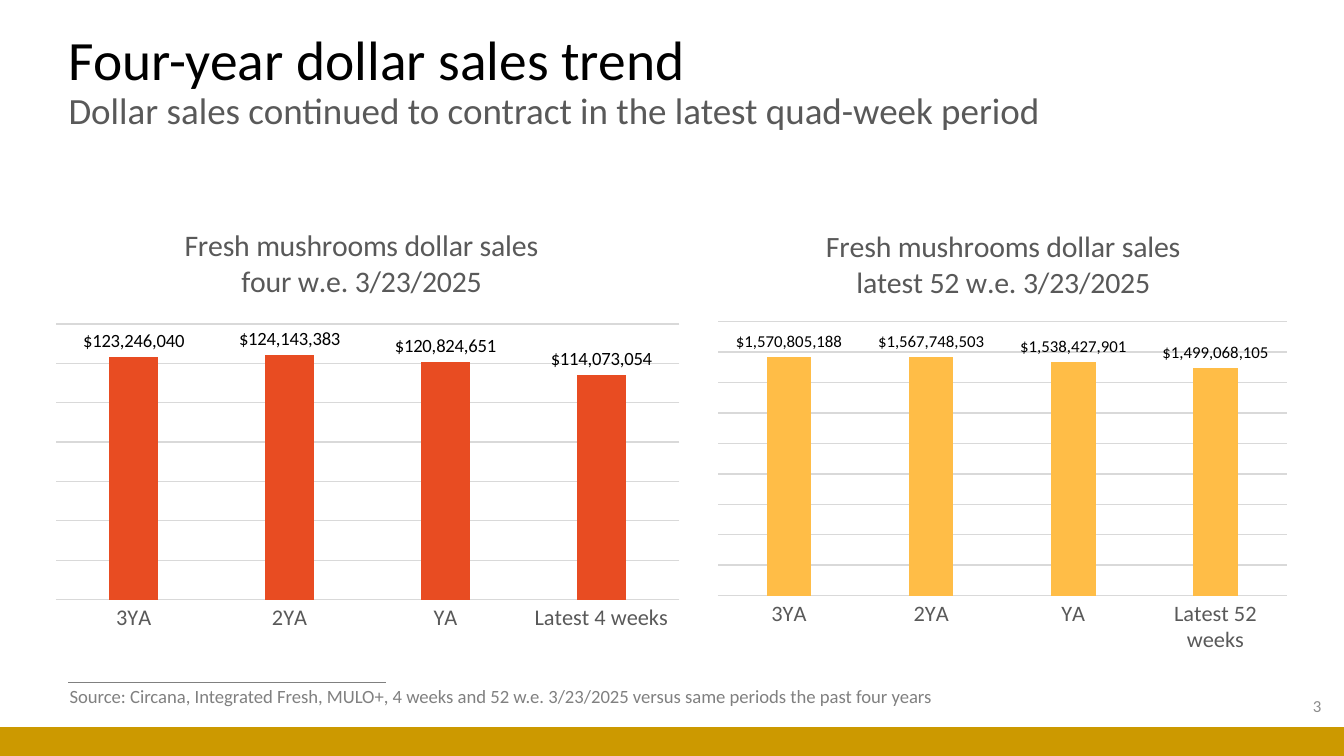
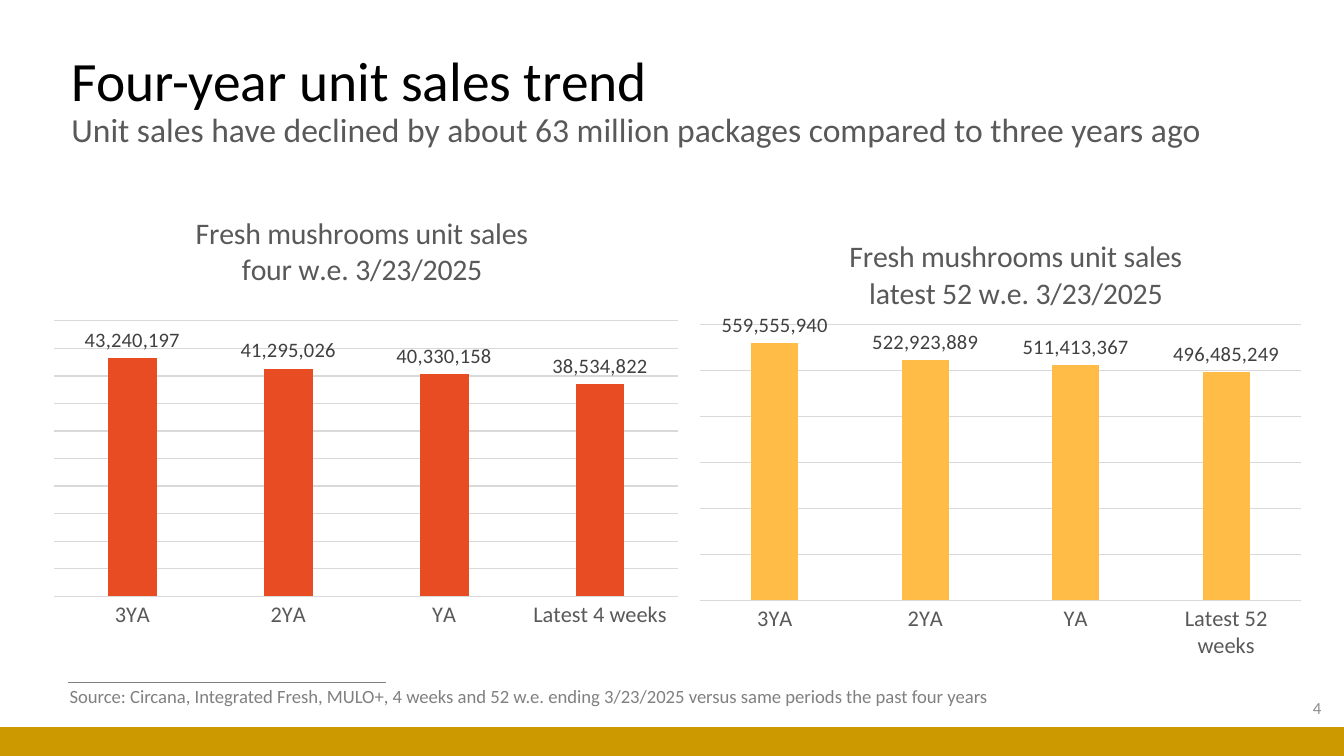
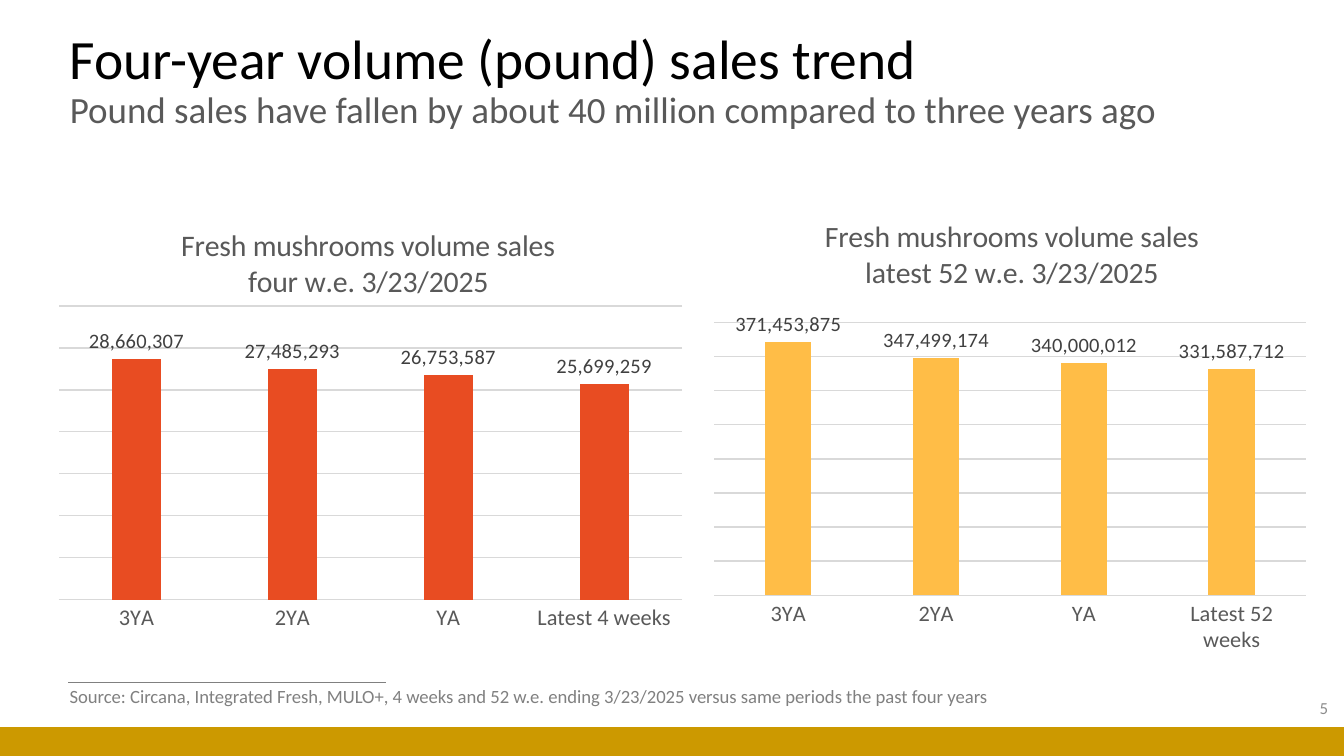
from dataclasses import dataclass
from typing import Any

from lxml import etree
from pptx import Presentation
from pptx.chart.data import CategoryChartData
from pptx.dml.color import RGBColor
from pptx.enum.chart import XL_CHART_TYPE, XL_LABEL_POSITION, XL_TICK_LABEL_POSITION, XL_TICK_MARK
from pptx.enum.shapes import MSO_CONNECTOR, MSO_SHAPE
from pptx.enum.text import MSO_ANCHOR, MSO_AUTO_SIZE, PP_ALIGN
from pptx.oxml.ns import qn
from pptx.util import Pt

COLUMNS = XL_CHART_TYPE.COLUMN_CLUSTERED
OUTSIDE_END = XL_LABEL_POSITION.OUTSIDE_END
NO_TICK = XL_TICK_MARK.NONE
NEXT_TO_AXIS = XL_TICK_LABEL_POSITION.NEXT_TO_AXIS
STRAIGHT = MSO_CONNECTOR.STRAIGHT
RECTANGLE = MSO_SHAPE.RECTANGLE
MIDDLE, TOP = MSO_ANCHOR.MIDDLE, MSO_ANCHOR.TOP
NO_FIT = MSO_AUTO_SIZE.NONE
LEFT, RIGHT = PP_ALIGN.LEFT, PP_ALIGN.RIGHT

BLACK = RGBColor(0x00, 0x00, 0x00)
DARK_GREY = RGBColor(0x40, 0x40, 0x40)
TEXT_GREY = RGBColor(0x59, 0x59, 0x59)
SOURCE_GREY = RGBColor(0x80, 0x80, 0x80)
NUMBER_GREY = RGBColor(0x8C, 0x8C, 0x8C)
GRID_GREY = RGBColor(0xD9, 0xD9, 0xD9)
GOLD = RGBColor(0xCC, 0x99, 0x00)
ORANGE = RGBColor(0xE8, 0x4C, 0x22)
YELLOW = RGBColor(0xFF, 0xBD, 0x47)

FONT = "Calibri"
DOLLARS = "\\$#,##0"
COUNT = "#,##0"
MILLION = 1_000_000
TITLE_ONLY = 5

Box = tuple[float, float, float, float]


@dataclass(frozen=True)
class SalesChart:
    box: Box
    plot: Box
    values: tuple[int, ...]
    axis_top: int
    axis_step: int
    label_size: float
    title_spot: tuple[float, float]


@dataclass(frozen=True)
class TrendPage:
    number: int
    measure: str
    heading: str
    message: str
    message_size: float
    title_box: Box
    number_spot: tuple[float, float]
    source_period: str
    number_format: str
    label_color: RGBColor
    four_weeks: SalesChart
    year: SalesChart


PAGES = (
    TrendPage(
        3, "dollar", "Four-year dollar sales trend",
        "Dollar sales continued to contract in the latest quad-week period",
        19.8, (29.5, 15.8, 619.2, 56.9), (553, 367.2), "w.e.", DOLLARS, BLACK,
        SalesChart((29.5, 111.6, 334.8, 238.3), (0, 0.26, 1, 0.62),
                   (123246040, 124143383, 120824651, 114073054),
                   140, 20, 10, (0.2, 0.03)),
        SalesChart((371.5, 117.4, 327.6, 232.6), (0.04, 0.24, 0.93, 0.64),
                   (1570805188, 1567748503, 1538427901, 1499068105),
                   1800, 200, 9, (0.21, 0.01)),
    ),
    TrendPage(
        4, "unit", "Four-year unit sales trend",
        "Unit sales have declined by about 63 million packages compared to three years ago",
        18, (31, 25.9, 652.3, 56.9), (553, 368.6), "w.e. ending", COUNT, DARK_GREY,
        SalesChart((28.8, 105.1, 334.8, 238.3), (0, 0.28, 1, 0.62),
                   (43240197, 41295026, 40330158, 38534822),
                   50, 5, 11, (0.22, 0.03)),
        SalesChart((374.4, 117.4, 339.8, 246.2), (0, 0.23, 0.95, 0.6),
                   (559555940, 522923889, 511413367, 496485249),
                   600, 100, 11, (0.23, 0.03)),
    ),
    TrendPage(
        5, "volume", "Four-year volume (pound) sales trend",
        "Pound sales have fallen by about 40 million compared to three years ago",
        19.8, (30.2, 15.1, 619.2, 56.9), (556.6, 368.6), "w.e. ending", COUNT, DARK_GREY,
        SalesChart((31, 111.6, 334.8, 238.3), (0, 0.22, 1, 0.66),
                   (28660307, 27485293, 26753587, 25699259),
                   35, 5, 11, (0.19, 0.03)),
        SalesChart((382.3, 111.6, 317.5, 238.3), (0, 0.26, 1, 0.62),
                   (371453875, 347499174, 340000012, 331587712),
                   400, 50, 11, (0.18, 0.01)),
    ),
)


def points(values: tuple[float, ...]) -> list[Pt]:
    return [Pt(value) for value in values]


def apply(target: Any, values: dict[str, Any]) -> None:
    for name, value in values.items():
        setattr(target, name, value)


def style_font(font: Any, size: float, color: RGBColor) -> None:
    apply(font, {"name": FONT, "size": Pt(size), "bold": False})
    font.color.rgb = color


def add_span(para: Any, text: str, size: float, color: RGBColor) -> None:
    span = para.add_run()
    span.text = text
    style_font(span.font, size, color)


def add_text(page: Any, box: Box, text: str, size: float, color: RGBColor,
             frame_format: dict[str, Any], align: Any) -> None:
    frame = page.shapes.add_textbox(*points(box)).text_frame
    apply(frame, frame_format)
    para = frame.paragraphs[0]
    para.alignment = align
    add_span(para, text, size, color)


def add_title(page: Any, trend: TrendPage) -> None:
    title = page.shapes.title
    apply(title, dict(zip(("left", "top", "width", "height"), points(trend.title_box))))
    apply(title.text_frame, {"vertical_anchor": MIDDLE, "word_wrap": True, "auto_size": NO_FIT})
    para = title.text_frame.paragraphs[0]
    apply(para, {"alignment": LEFT, "line_spacing": 0.9})
    add_span(para, trend.heading, 29.7, BLACK)
    para.add_line_break()
    add_span(para, trend.message, trend.message_size, TEXT_GREY)


def add_footer(page: Any, trend: TrendPage) -> None:
    rule = page.shapes.add_connector(STRAIGHT, *points((36.7, 365.8, 206.6, 365.8)))
    rule.line.color.rgb = SOURCE_GREY
    rule.line.width = Pt(0.5)
    etree.SubElement(rule.element.spPr, qn("a:effectLst"))
    band = page.shapes.add_shape(RECTANGLE, *points((0, 389.5, 720, 15.5)))
    band.shadow.inherit = False
    band.fill.solid()
    band.fill.fore_color.rgb = GOLD
    band.line.fill.background()
    add_text(page, (*trend.number_spot, 162, 21.6), str(trend.number), 9, NUMBER_GREY,
             {"vertical_anchor": MIDDLE, "word_wrap": True}, RIGHT)
    source = (f"Source: Circana, Integrated Fresh, MULO+, 4 weeks and 52 {trend.source_period} "
              "3/23/2025 versus same periods the past four years")
    add_text(page, (30.2, 363.6, 521.3, 19.4), source, 10, SOURCE_GREY,
             {"vertical_anchor": TOP, "word_wrap": False}, LEFT)


def place(parent: Any, index: int, settings: dict[str, Any]) -> None:
    for old in parent.findall(qn("c:layout")):
        parent.remove(old)
    layout = etree.Element(qn("c:layout"))
    manual = etree.SubElement(layout, qn("c:manualLayout"))
    for name, value in settings.items():
        etree.SubElement(manual, qn(f"c:{name}")).set("val", str(value))
    parent.insert(index, layout)


def add_chart_title(chart: Any, lines: tuple[str, str], spot: tuple[float, float]) -> None:
    chart.has_title = True
    frame = chart.chart_title.text_frame
    frame.text = "\n".join(lines)
    for para in frame.paragraphs:
        style_font(para.font, 16, TEXT_GREY)
        for span in para.runs:
            style_font(span.font, 16, TEXT_GREY)
    place(chart.chart_title.element, 1,
          {"xMode": "edge", "yMode": "edge", "x": spot[0], "y": spot[1]})


def add_sales_chart(page: Any, trend: TrendPage, sales: SalesChart, color: RGBColor,
                    period: str, last_category: str) -> None:
    chart_data = CategoryChartData(number_format=trend.number_format)
    chart_data.categories = ["3YA", "2YA", "YA", last_category]
    chart_data.add_series("Series 1", sales.values)
    chart = page.shapes.add_chart(COLUMNS, *points(sales.box), chart_data).chart
    chart.has_legend = False
    style_font(chart.font, 10, BLACK)
    add_chart_title(chart, (f"Fresh mushrooms {trend.measure} sales", f"{period} w.e. 3/23/2025"),
                    sales.title_spot)

    category_axis = chart.category_axis
    apply(category_axis, {"major_tick_mark": NO_TICK, "minor_tick_mark": NO_TICK,
                          "tick_label_position": NEXT_TO_AXIS, "has_major_gridlines": False})
    style_font(category_axis.tick_labels.font, 12, TEXT_GREY)
    value_axis = chart.value_axis
    apply(value_axis, {"major_tick_mark": NO_TICK, "minor_tick_mark": NO_TICK,
                       "minimum_scale": 0, "maximum_scale": sales.axis_top * MILLION,
                       "major_unit": sales.axis_step * MILLION,
                       "has_major_gridlines": True, "visible": False})
    for line in (category_axis.format.line, value_axis.major_gridlines.format.line):
        line.color.rgb = GRID_GREY
        line.width = Pt(0.75)

    plot = chart.plots[0]
    apply(plot, {"gap_width": 219, "overlap": -27, "vary_by_categories": False,
                 "has_data_labels": True})
    apply(plot.data_labels, {"show_value": True, "position": OUTSIDE_END,
                             "number_format": trend.number_format,
                             "number_format_is_linked": False})
    style_font(plot.data_labels.font, sales.label_size, trend.label_color)
    fill = plot.series[0].format.fill
    fill.solid()
    fill.fore_color.rgb = color
    plot_area = chart.element.find(f"{qn('c:chart')}/{qn('c:plotArea')}")
    place(plot_area, 0, {"layoutTarget": "inner", "xMode": "edge", "yMode": "edge",
                         **dict(zip("xywh", sales.plot))})


def main() -> None:
    deck = Presentation()
    apply(deck, {"slide_width": Pt(720), "slide_height": Pt(405)})
    for trend in PAGES:
        page = deck.slides.add_slide(deck.slide_layouts[TITLE_ONLY])
        add_footer(page, trend)
        add_title(page, trend)
        add_sales_chart(page, trend, trend.four_weeks, ORANGE, "four", "Latest 4 weeks")
        add_sales_chart(page, trend, trend.year, YELLOW, "latest 52", "Latest 52 weeks")
    deck.save("out.pptx")


if __name__ == "__main__":
    main()
